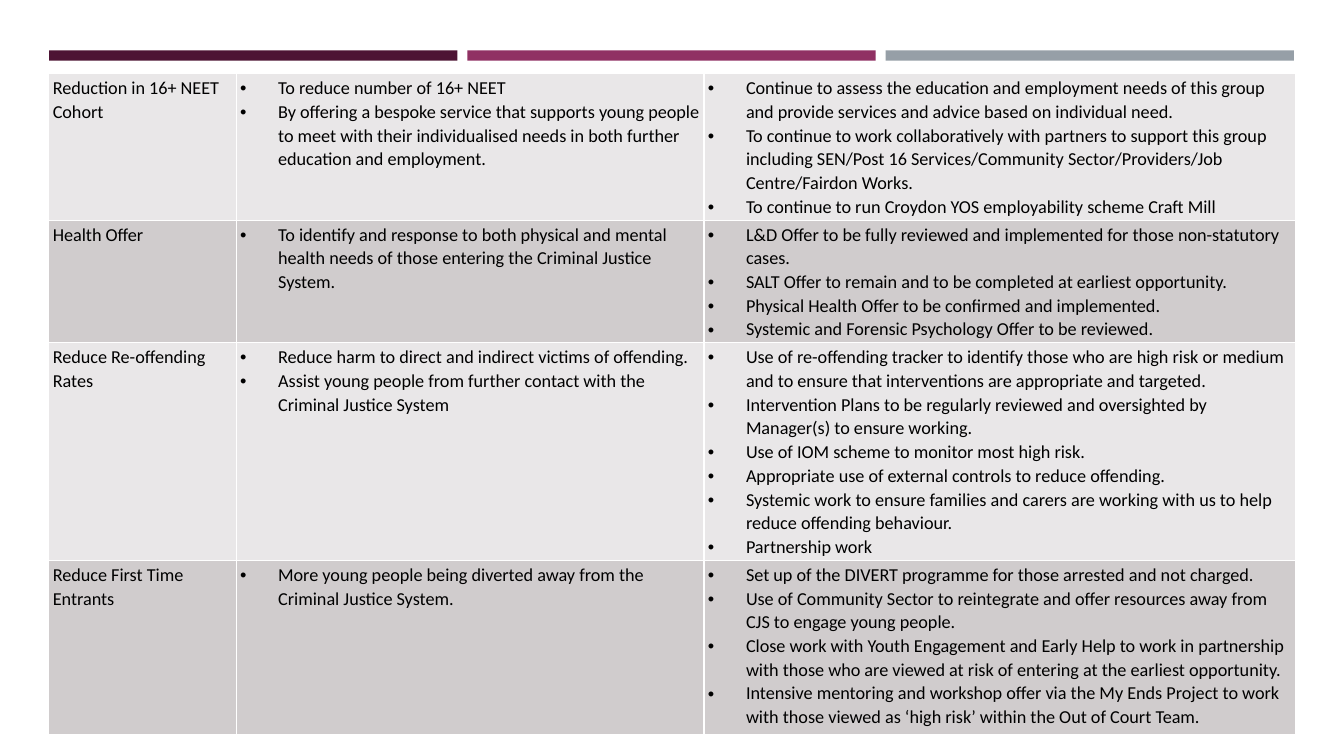
from dataclasses import dataclass

from lxml import etree
from pptx import Presentation
from pptx.dml.color import RGBColor
from pptx.enum.shapes import MSO_SHAPE
from pptx.oxml.ns import qn
from pptx.util import Cm, Pt

RECTANGLE = MSO_SHAPE.RECTANGLE
BLANK_LAYOUT = 6

BLACK = "000000"
WHITE = "FFFFFF"
ROW_BANDS = ("E9E7E8", "D0CCCD")
BAR_COLOURS = ("4D1434", "903163", "969FA7")

# Lengths in centimetres
BAR_LEFT, BAR_TOP, BAR_WIDTH, BAR_HEIGHT = 1.24, 1.27, 10.29, 0.26
BAR_PITCH = 10.54
TABLE_LEFT, TABLE_TOP = 1.23, 1.86
COLUMN_WIDTHS = (4.72, 11.79, 14.91)
BULLET_INDENT = 0.96

CELL_FORMAT = {
    "margin_left": Cm(0.1),
    "margin_right": Cm(0.1),
    "margin_top": Cm(0.05),
    "margin_bottom": Cm(0.05),
}
FONT_FORMAT = {"name": "Calibri", "size": Pt(13), "bold": False}


@dataclass
class Priority:
    title: str
    aims: list[str]
    actions: list[str]
    height: float


PRIORITIES = [
    Priority(
        "Reduction in 16+ NEET Cohort",
        [
            "To reduce number of 16+ NEET",
            "By offering a bespoke service that supports young people to meet with their "
            "individualised needs in both further education and employment.",
        ],
        [
            "Continue to assess the education and employment needs of this group and provide "
            "services and advice based on individual need.",
            "To continue to work collaboratively with partners to support this group including "
            "SEN/Post 16 Services/Community Sector/Providers/Job Centre/Fairdon Works.",
            "To continue to run Croydon YOS employability scheme Craft Mill",
        ],
        3.6,
    ),
    Priority(
        "Health Offer",
        [
            "To identify and response to both physical and mental health needs of those "
            "entering the Criminal Justice System.",
        ],
        [
            "L&D Offer to be fully reviewed and implemented for those non-statutory cases.",
            "SALT Offer to remain and to be completed at earliest opportunity.",
            "Physical Health Offer to be confirmed and implemented.",
            "Systemic and Forensic Psychology Offer to be reviewed.",
        ],
        3.0,
    ),
    Priority(
        "Reduce Re-offending Rates",
        [
            "Reduce harm to direct and indirect victims of offending.",
            "Assist young people from further contact with the Criminal Justice System",
        ],
        [
            "Use of re-offending tracker to identify those who are high risk or medium and to "
            "ensure that interventions are appropriate and targeted.",
            "Intervention Plans to be regularly reviewed and oversighted by Manager(s) to "
            "ensure working.",
            "Use of IOM scheme to monitor most high risk.",
            "Appropriate use of external controls to reduce offending.",
            "Systemic work to ensure families and carers are working with us to help reduce "
            "offending behaviour.",
            "Partnership work",
        ],
        5.38,
    ),
    Priority(
        "Reduce First Time Entrants",
        ["More young people being diverted away from the Criminal Justice System."],
        [
            "Set up of the DIVERT programme for those arrested and not charged.",
            "Use of Community Sector to reintegrate and offer resources away from CJS to "
            "engage young people.",
            "Close work with Youth Engagement and Early Help to work in partnership with those "
            "who are viewed at risk of entering at the earliest opportunity.",
            "Intensive mentoring and workshop offer via the My Ends Project to work with those "
            "viewed as ‘high risk’ within the Out of Court Team.",
        ],
        4.4,
    ),
]


def paint(fill, colour: str) -> None:
    fill.solid()
    fill.fore_color.rgb = RGBColor.from_string(colour)


def apply_format(target, values: dict) -> None:
    for attribute, value in values.items():
        setattr(target, attribute, value)


def add_bullet(paragraph) -> None:
    properties = paragraph._p.get_or_add_pPr()
    properties.set("marL", str(Cm(BULLET_INDENT)))
    properties.set("indent", str(-Cm(BULLET_INDENT)))
    etree.SubElement(properties, qn("a:buFont"), typeface="Arial")
    etree.SubElement(properties, qn("a:buChar"), char="•")


def add_borders(cell, colour: str) -> None:
    properties = cell._tc.get_or_add_tcPr()
    for side in ("lnL", "lnR", "lnT", "lnB"):
        border = etree.SubElement(properties, qn(f"a:{side}"), w=str(Pt(1)))
        solid = etree.SubElement(border, qn("a:solidFill"))
        etree.SubElement(solid, qn("a:srgbClr"), val=colour)


def fill_cell(cell, lines: list[str], band: str, bulleted: bool) -> None:
    apply_format(cell, CELL_FORMAT)
    add_borders(cell, WHITE)
    paint(cell.fill, band)
    cell.text = "\n".join(lines)
    for paragraph in cell.text_frame.paragraphs:
        paragraph.line_spacing = 1.07
        if bulleted:
            add_bullet(paragraph)
        font = paragraph.runs[0].font
        apply_format(font, FONT_FORMAT)
        paint(font.fill, BLACK)


def add_header_bars(slide) -> None:
    for position, colour in enumerate(BAR_COLOURS):
        bar = slide.shapes.add_shape(
            RECTANGLE, Cm(BAR_LEFT + position * BAR_PITCH), Cm(BAR_TOP),
            Cm(BAR_WIDTH), Cm(BAR_HEIGHT),
        )
        bar.shadow.inherit = False
        paint(bar.fill, colour)
        bar.line.fill.background()


def add_priorities_table(slide) -> None:
    table = slide.shapes.add_table(
        len(PRIORITIES), len(COLUMN_WIDTHS), Cm(TABLE_LEFT), Cm(TABLE_TOP),
        Cm(sum(COLUMN_WIDTHS)), Cm(sum(priority.height for priority in PRIORITIES)),
    ).table
    apply_format(table, {"first_row": False, "horz_banding": False})
    for column, width in zip(table.columns, COLUMN_WIDTHS):
        column.width = Cm(width)
    for index, (row, priority) in enumerate(zip(table.rows, PRIORITIES)):
        row.height = Cm(priority.height)
        band = ROW_BANDS[index % len(ROW_BANDS)]
        contents = ([priority.title], priority.aims, priority.actions)
        for column_index, (cell, lines) in enumerate(zip(row.cells, contents)):
            fill_cell(cell, lines, band, bulleted=column_index > 0)


def main() -> None:
    presentation = Presentation()
    presentation.slide_width = Cm(33.87)
    presentation.slide_height = Cm(19.05)
    slide = presentation.slides.add_slide(presentation.slide_layouts[BLANK_LAYOUT])
    paint(slide.background.fill, WHITE)
    add_header_bars(slide)
    add_priorities_table(slide)
    presentation.save("out.pptx")


if __name__ == "__main__":
    main()
